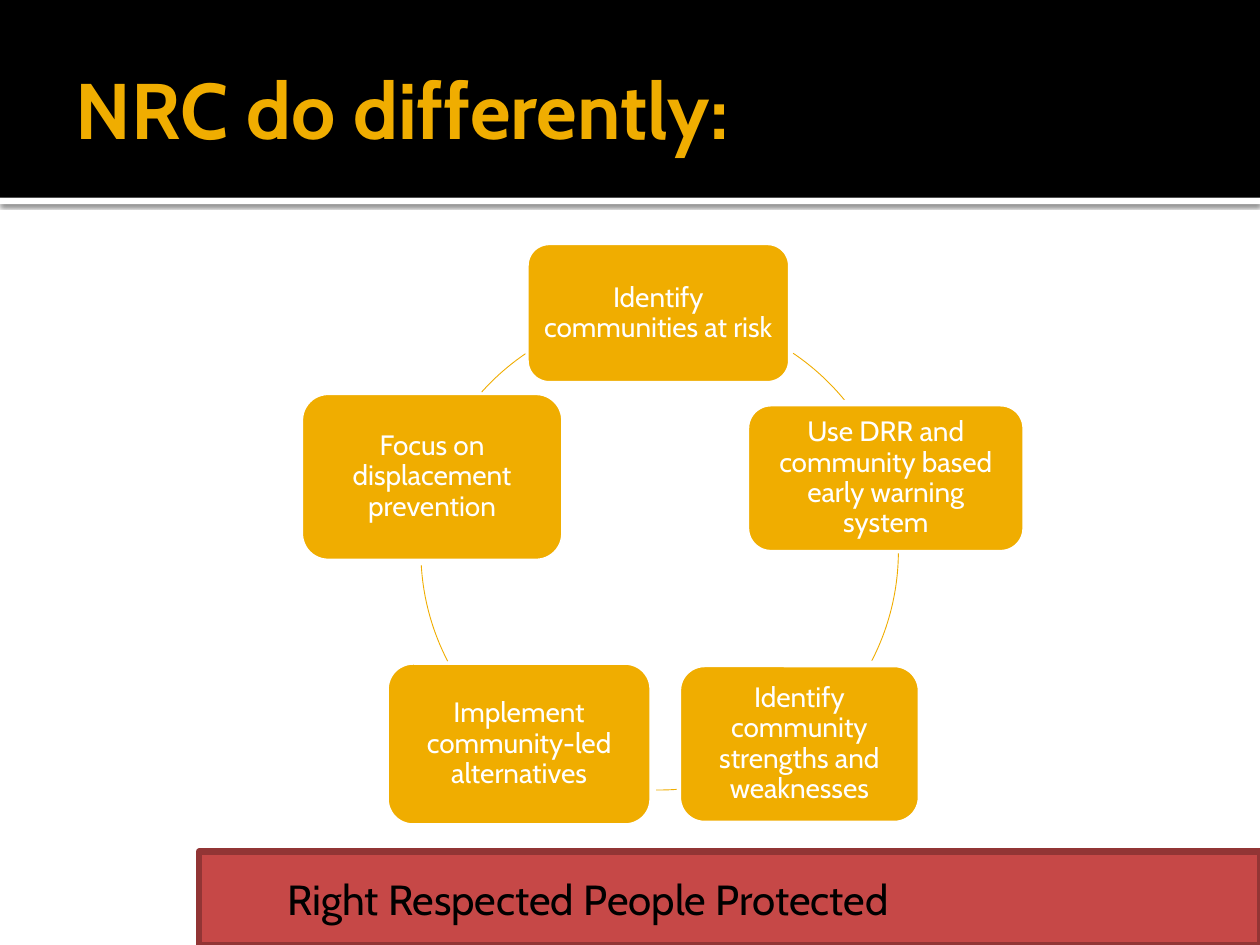
from lxml import etree
from pptx import Presentation
from pptx.dml.color import RGBColor
from pptx.enum.shapes import MSO_SHAPE
from pptx.enum.text import MSO_ANCHOR, PP_ALIGN
from pptx.oxml import parse_xml
from pptx.oxml.ns import nsdecls
from pptx.util import Inches, Pt

GOLD, WHITE, BLACK = "F0AD00", "FFFFFF", "000000"


def add(kind, place, fill=None, line=None, width=0):
    """Add a preset shape without shadow; None leaves out the fill or line."""
    shape = slide.shapes.add_shape(kind, *[Inches(n) for n in place])
    shape.shadow.inherit = False
    if fill:
        shape.fill.solid()
        shape.fill.fore_color.rgb = RGBColor.from_string(fill)
    else:
        shape.fill.background()
    if line:
        shape.line.color.rgb = RGBColor.from_string(line)
        shape.line.width = Pt(width)
    else:
        shape.line.fill.background()
    return shape


def write(shape, text, size, color, insets, align=PP_ALIGN.LEFT, bold=False):
    """Fill a shape with one paragraph; insets run left, top, right, bottom."""
    frame = shape.text_frame
    frame.word_wrap = True
    frame.vertical_anchor = MSO_ANCHOR.MIDDLE
    for side, inset in zip(("left", "top", "right", "bottom"), insets):
        setattr(frame, f"margin_{side}", Inches(inset))
    para = frame.paragraphs[0]
    para.alignment = align
    run = para.add_run()
    run.text = text
    for name, value in {"name": "Cabin", "size": Pt(size), "bold": bold}.items():
        setattr(run.font, name, value)
    run.font.color.rgb = RGBColor.from_string(color)
    return para


deck = Presentation()
deck.slide_width, deck.slide_height = Inches(10), Inches(7.5)
slide = deck.slides.add_slide(deck.slide_layouts[6])

# Header and footer bands
strip = add(MSO_SHAPE.RECTANGLE, (0, 1.57, 10, 0.05), WHITE)
effects = strip._element.spPr.find("{*}effectLst")
shadow = parse_xml(
    f'<a:outerShdw {nsdecls("a")} blurRad="{Pt(2.5)}" dist="{Pt(0.8)}" '
    'dir="5400000" algn="t" rotWithShape="0">'
    f'<a:srgbClr val="{BLACK}"><a:alpha val="60000"/></a:srgbClr></a:outerShdw>'
)
effects.append(shadow)
add(MSO_SHAPE.RECTANGLE, (0, 0, 10, 1.57), BLACK)
footer = add(MSO_SHAPE.RECTANGLE, (1.58, 6.76, 8.42, 0.74), "C64847", "923535", 3.78)
write(footer, "Right Respected People Protected", 24, BLACK, (0.7, 0.05, 0.1, 0.05))

title = slide.shapes.add_textbox(Inches(0.5), Inches(0.17), Inches(9), Inches(1.37))
write(title, "NRC do differently:", 45, GOLD, (0.1, 0.05, 0.05, 0.05), bold=True)

# Cycle: each step is followed by the arc (degrees, clockwise from east) to the next
ring = (3.34, 2.48, 3.79, 3.79)
steps = [
    ("Identify communities at risk", (4.17, 1.92, 2.11, 1.13), (304, 321.2)),
    ("Use DRR and community based early warning system",
     (5.92, 3.2, 2.22, 1.19), (0.5, 28.3)),
    ("Identify community strengths and weaknesses",
     (5.38, 5.27, 1.93, 1.27), (85.9, 91.7)),
    ("Implement community-led alternatives",
     (3.06, 5.25, 2.12, 1.31), (152.6, 177.1)),
    ("Focus on displacement prevention", (2.38, 3.11, 2.1, 1.35), (221.8, 235.8)),
]
for text, place, angles in steps:
    box = add(MSO_SHAPE.ROUNDED_RECTANGLE, place, GOLD, WHITE, 3.78)
    para = write(box, text, 16, WHITE, [0.07] * 4, PP_ALIGN.CENTER)
    para.line_spacing = 0.9
    arc = add(MSO_SHAPE.ARC, ring, line=GOLD, width=0.5)
    for i, angle in enumerate(angles):
        arc.adjustments[i] = angle * 0.6  # 60000 units a degree, scaled by 100000

deck.save("out.pptx")
